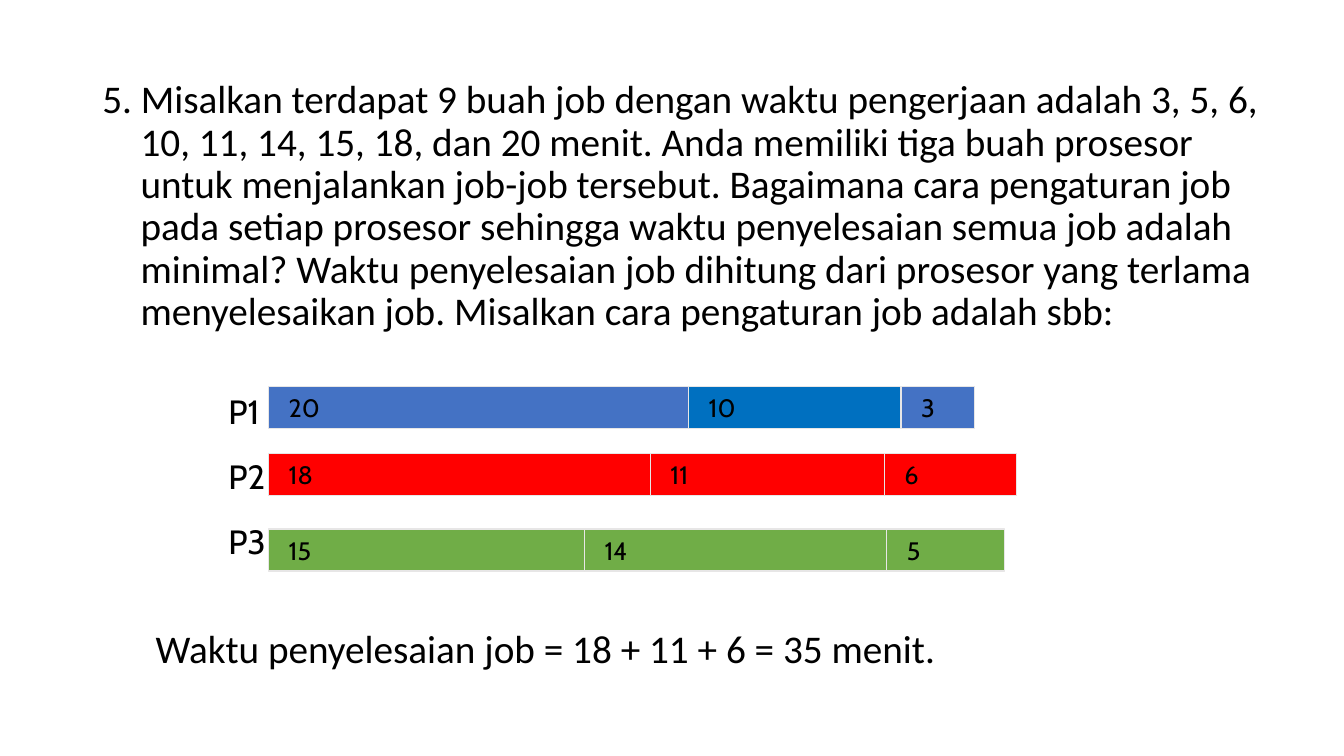
from dataclasses import dataclass
from itertools import accumulate

from pptx import Presentation
from pptx.dml.color import RGBColor
from pptx.enum.shapes import MSO_SHAPE as Shape
from pptx.enum.text import MSO_ANCHOR as Anchor, PP_ALIGN as Align
from pptx.util import Inches, Pt

BLACK = RGBColor(0x00, 0x00, 0x00)
BLUE = RGBColor(0x44, 0x72, 0xC4)
AZURE = RGBColor(0x00, 0x70, 0xC0)
RED = RGBColor(0xFF, 0x00, 0x00)
GREEN = RGBColor(0x70, 0xAD, 0x47)
GREY = RGBColor(0xE7, 0xE6, 0xE6)

WIDE, HIGH = Inches(13.33), Inches(7.5)
COLS, ROWS = 160, 90
START, THICK = 31.97, 5

BODY = {"name": "Calibri", "size": Pt(28)}
LABEL = {"name": "Cabin", "size": Pt(24)}
TIME = {"name": "Cabin", "size": Pt(18)}

TASK = (
    "5. Misalkan terdapat 9 buah job dengan waktu pengerjaan adalah 3, 5, 6, "
    "10, 11, 14, 15, 18, dan 20 menit. Anda memiliki tiga buah prosesor untuk "
    "menjalankan job-job tersebut. Bagaimana cara pengaturan job pada setiap "
    "prosesor sehingga waktu penyelesaian semua job adalah minimal? Waktu "
    "penyelesaian job dihitung dari prosesor yang terlama menyelesaikan job. "
    "Misalkan cara pengaturan job adalah sbb:"
)
TOTAL = "Waktu penyelesaian job = 18 + 11 + 6 = 35 menit."


@dataclass
class Job:
    time: int
    span: float
    fill: RGBColor


@dataclass
class Lane:
    name: str
    row: float
    jobs: list[Job]


@dataclass
class Para:
    text: str
    lead: float
    gap: float = 0
    left: float = 0
    first: float = 0


LANES = [
    Lane("P1", 46, [Job(20, 50, BLUE), Job(10, 25.3, AZURE), Job(3, 8.75, BLUE)]),
    Lane("P2", 54, [Job(18, 45.45, RED), Job(11, 27.85, RED), Job(6, 15.75, RED)]),
    Lane("P3", 63, [Job(15, 37.6, GREEN), Job(14, 36, GREEN), Job(5, 14, GREEN)]),
]


def place(col: float, row: float, wide: float, high: float) -> list[int]:
    """Turn grid columns and rows into slide lengths."""
    return [round(col * WIDE / COLS), round(row * HIGH / ROWS),
            round(wide * WIDE / COLS), round(high * HIGH / ROWS)]


def style(font, form: dict) -> None:
    for key, value in form.items():
        setattr(font, key, value)
    font.color.rgb = BLACK


def add_text(slide, area: list[int], paras: list[Para], form: dict) -> None:
    frame = slide.shapes.add_textbox(*area).text_frame
    frame.word_wrap = True
    frame.margin_right = 0
    for num, item in enumerate(paras):
        para = frame.add_paragraph() if num else frame.paragraphs[0]
        props = para._p.get_or_add_pPr()
        props.set("marL", str(Inches(item.left)))
        props.set("indent", str(Inches(item.first)))
        para.line_spacing = item.lead
        para.space_before = Pt(item.gap)
        run = para.add_run()
        run.text = item.text
        style(run.font, form)


def add_job(slide, job: Job, col: float, row: float) -> None:
    bar = slide.shapes.add_shape(Shape.RECTANGLE, *place(col, row, job.span, THICK))
    bar.shadow.inherit = False
    bar.fill.solid()
    bar.fill.fore_color.rgb = job.fill
    bar.line.color.rgb = GREY
    bar.line.width = Pt(1)
    frame = bar.text_frame
    look = {"margin_left": Inches(0.2), "word_wrap": True,
            "vertical_anchor": Anchor.MIDDLE}
    for key, value in look.items():
        setattr(frame, key, value)
    para = frame.paragraphs[0]
    para.alignment = Align.LEFT
    run = para.add_run()
    run.text = str(job.time)
    style(run.font, TIME)


def add_lane(slide, lane: Lane) -> None:
    cols = accumulate((job.span for job in lane.jobs), initial=START)
    for job, col in zip(lane.jobs, cols):
        add_job(slide, job, col, lane.row)


def main() -> None:
    deck = Presentation()
    deck.slide_width, deck.slide_height = WIDE, HIGH
    slide = deck.slides.add_slide(deck.slide_layouts[6])
    add_text(slide, place(11, 8.94, 141.2, 33),
             [Para(TASK, 0.9, left=0.38, first=-0.38)], BODY)
    add_text(slide, place(11, 74.4, 141.2, 6.6),
             [Para(TOTAL, 0.9, left=0.53)], BODY)
    for lane in LANES:
        add_lane(slide, lane)
    names = [Para(lane.name, 1.2, gap=11.8 if num else 0)
             for num, lane in enumerate(LANES)]
    add_text(slide, place(26, 45, START - 26, 23), names, LABEL)
    deck.save("out.pptx")


if __name__ == "__main__":
    main()
